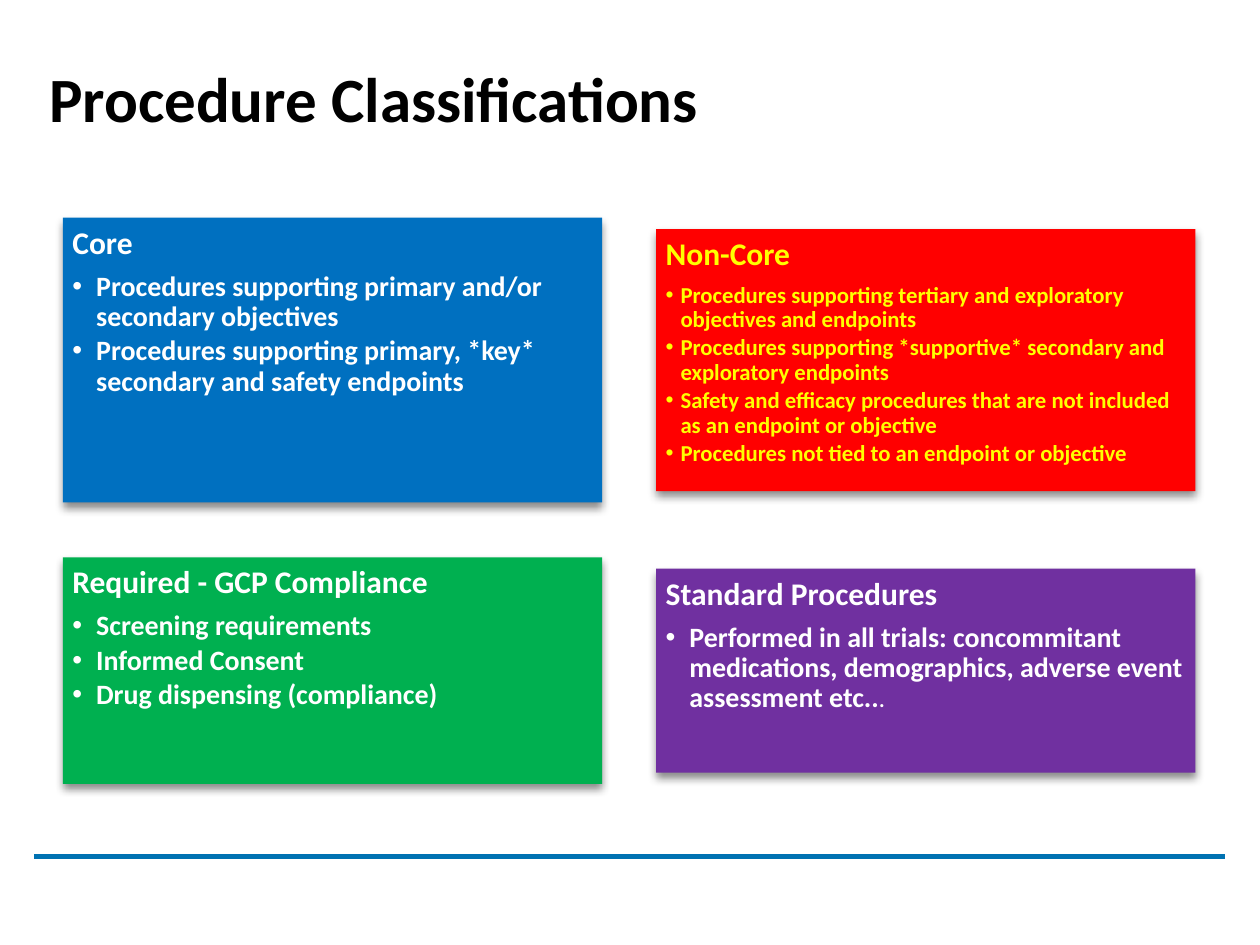
import pptx
import pptx.dml.color
import pptx.enum.shapes
import pptx.enum.text
import pptx.oxml
import pptx.oxml.ns
import pptx.util
from lxml import etree

Cm, Pt = pptx.util.Cm, pptx.util.Pt
NS = pptx.oxml.ns.nsdecls("a")

# Grid: cards share a width and sit centred on their row
COLUMNS = (1.27, 13.23)
ROW_CENTRES = (7.26, 13.52)
CARD_WIDTH = 10.87

# column, row, height, fill, text colour, bullet size, indent, heading, bullets
CARDS = [
    (0, 0, 5.74, "0070C0", "FFFFFF", 16, 0.48, "Core", [
        "Procedures supporting primary and/or secondary objectives",
        "Procedures supporting primary, *key* secondary and safety endpoints"]),
    (1, 0, 5.28, "FF0000", "FFFF00", 13, 0.3, "Non-Core", [
        "Procedures supporting tertiary and exploratory objectives and endpoints",
        "Procedures supporting *supportive* secondary and exploratory endpoints",
        "Safety and efficacy procedures that are not included as an endpoint or objective",
        "Procedures not tied to an endpoint or objective"]),
    (0, 1, 4.57, "00B050", "FFFFFF", 16, 0.48, "Required - GCP Compliance", [
        "Screening requirements",
        "Informed Consent",
        "Drug dispensing (compliance)"]),
    (1, 1, 4.11, "7030A0", "FFFFFF", 16, 0.48, "Standard Procedures", [
        "Performed in all trials: concommitant medications, demographics, "
        "adverse event assessment etc.."]),
]


def rgb(value):
    return pptx.dml.color.RGBColor.from_string(value)


def write_text(paragraph, text, *, size, color, font, bold=True):
    run = paragraph.add_run()
    run.text = text
    run.font.name = font
    run.font.size = Pt(size)
    run.font.bold = bold
    run.font.color.rgb = rgb(color)


class ProcedureSlide:
    font = "Calibri"
    heading_size = 18
    inset = 0.19

    def __init__(self, deck):
        self.slide = deck.slides.add_slide(deck.slide_layouts[5])

    def title(self, text):
        title = self.slide.shapes.title
        title.left, title.top = Cm(0.74), Cm(0.36)
        title.width, title.height = Cm(23.93), Cm(3.2)
        frame = title.text_frame
        frame.auto_size = pptx.enum.text.MSO_AUTO_SIZE.NONE
        frame.vertical_anchor = pptx.enum.text.MSO_ANCHOR.MIDDLE
        heading = frame.paragraphs[0]
        heading.alignment = pptx.enum.text.PP_ALIGN.LEFT
        write_text(heading, text, size=36, color="000000", font=self.font)

    def rule(self, left, right, y, color, weight):
        rule = self.slide.shapes.add_connector(
            pptx.enum.shapes.MSO_CONNECTOR.STRAIGHT, Cm(left), Cm(y), Cm(right), Cm(y))
        rule.line.color.rgb = rgb(color)
        rule.line.width = Pt(weight)
        etree.SubElement(rule._element.spPr, pptx.oxml.ns.qn("a:effectLst"))

    def shadow(self, shape):
        shape.shadow.inherit = False
        effects = shape._element.spPr.find(pptx.oxml.ns.qn("a:effectLst"))
        effects.append(pptx.oxml.parse_xml(
            f'<a:outerShdw {NS} blurRad="{Pt(5)}" dist="{Pt(3)}" dir="5400000" '
            'rotWithShape="0"><a:srgbClr val="000000"><a:alpha val="45000"/>'
            '</a:srgbClr></a:outerShdw>'))

    def paragraph(self, paragraph, text, size, color, after):
        paragraph.alignment = pptx.enum.text.PP_ALIGN.LEFT
        paragraph.line_spacing = 0.9
        paragraph.space_after = Pt(size * after)
        write_text(paragraph, text, size=size, color=color, font=self.font)
        return paragraph

    def bullet(self, frame, text, size, color, indent):
        item = self.paragraph(frame.add_paragraph(), text, size, color, 0.15)
        properties = item._p.get_or_add_pPr()
        properties.set("marL", str(Cm(indent)))
        properties.set("indent", str(-Cm(indent)))
        properties.append(pptx.oxml.parse_xml(f'<a:buFont {NS} typeface="Arial"/>'))
        properties.append(pptx.oxml.parse_xml(f'<a:buChar {NS} char="•"/>'))
        return item

    def card(self, column, row, height, fill, color, size, indent, heading, bullets):
        card = self.slide.shapes.add_shape(
            pptx.enum.shapes.MSO_SHAPE.RECTANGLE, Cm(COLUMNS[column]),
            Cm(ROW_CENTRES[row] - height / 2), Cm(CARD_WIDTH), Cm(height))
        card.fill.solid()
        card.fill.fore_color.rgb = rgb(fill)
        card.line.fill.background()
        self.shadow(card)
        frame = card.text_frame
        frame.word_wrap = True
        frame.vertical_anchor = pptx.enum.text.MSO_ANCHOR.TOP
        frame.margin_left = frame.margin_right = Cm(self.inset)
        frame.margin_top = frame.margin_bottom = Cm(self.inset)
        self.paragraph(frame.paragraphs[0], heading, self.heading_size, color, 0.35)
        return [self.bullet(frame, text, size, color, indent) for text in bullets]


def main():
    deck = pptx.Presentation()
    deck.slide_width, deck.slide_height = Cm(25.4), Cm(19.05)
    page = ProcedureSlide(deck)

    # Footer rule and title
    page.rule(0.69, 24.69, 17.27, "0072B2", 3)
    page.title("Procedure Classifications")

    # Classification cards
    for card in CARDS:
        items = page.card(*card)
    # The last dot of the final ellipsis is smaller
    write_text(items[-1], ".", size=12, color="FFFFFF", font=page.font)

    deck.save("out.pptx")


if __name__ == "__main__":
    main()
